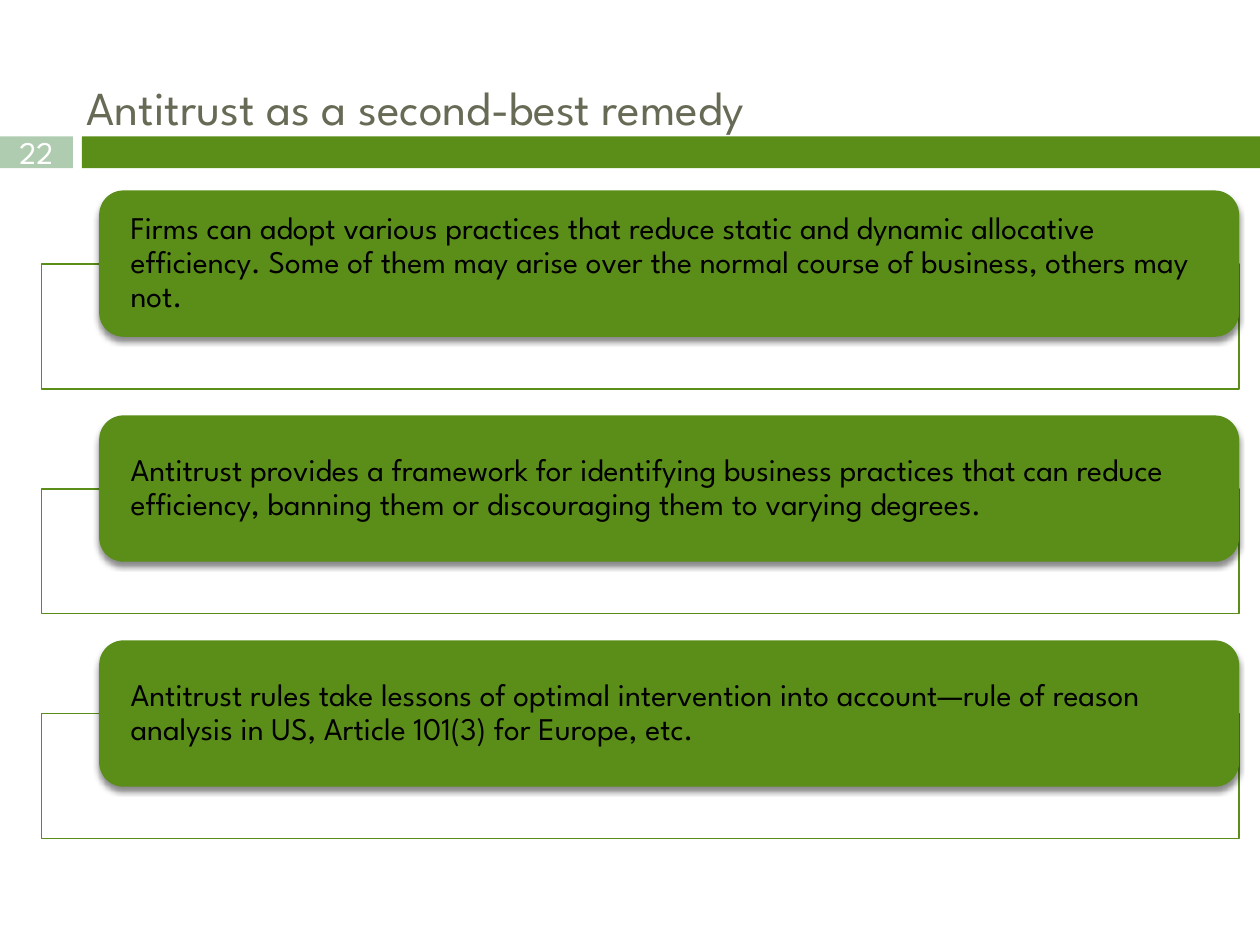
import lxml.etree
import pptx
import pptx.dml.color
import pptx.enum.shapes
import pptx.enum.text
import pptx.oxml
import pptx.oxml.ns
import pptx.util

Cm = pptx.util.Cm
Pt = pptx.util.Pt
SHAPES = pptx.enum.shapes.MSO_SHAPE
ALIGN = pptx.enum.text.PP_ALIGN
MIDDLE = pptx.enum.text.MSO_ANCHOR.MIDDLE
GREEN = "5A8E19"
SHADOW = (
    f'<a:outerShdw {pptx.oxml.ns.nsdecls("a")} blurRad="38100" dist="30480" '
    'dir="5400000" rotWithShape="0"><a:srgbClr val="000000">'
    '<a:alpha val="45000"/></a:srgbClr></a:outerShdw>'
)


def paint(color_format, hex_string):
    color_format.rgb = pptx.dml.color.RGBColor.from_string(hex_string)


def write(shape, text, color, frame_values, paragraph_values, size):
    frame = shape.text_frame
    frame.text = text
    paragraph = frame.paragraphs[0]
    font_values = {"name": "League Spartan", "size": Pt(size), "bold": False}
    for target, values in (
        (frame, {"word_wrap": True, "vertical_anchor": MIDDLE, **frame_values}),
        (paragraph, paragraph_values),
        (paragraph.font, font_values),
    ):
        for name, value in values.items():
            setattr(target, name, value)
    paint(paragraph.font.color, color)


deck = pptx.Presentation()
deck.slide_width, deck.slide_height = Cm(25.4), Cm(19.05)
slide = deck.slides.add_slide(deck.slide_layouts[5])

title = slide.shapes.title
title_place = {"left": Cm(1.27), "top": Cm(1.32), "width": Cm(24), "height": Cm(1.65)}
for name, value in title_place.items():
    setattr(title, name, value)
write(title, "Antitrust as a second-best remedy", "676A55",
      {"margin_left": Cm(0.48)}, {"alignment": ALIGN.LEFT}, 27)

header_parts = []
for left, width, color in ((0, 1.47, "B0CCB0"), (1.65, 23.75, GREEN)):
    part = slide.shapes.add_shape(
        SHAPES.RECTANGLE, Cm(left), Cm(2.75), Cm(width), Cm(0.64))
    part.shadow.inherit = False
    part.fill.solid()
    paint(part.fill.fore_color, color)
    part.line.fill.background()
    header_parts.append(part)
no_margins = dict.fromkeys(
    ("margin_left", "margin_right", "margin_top", "margin_bottom"), 0)
write(header_parts[0], "22", "FFFFFF", no_margins, {"alignment": ALIGN.CENTER}, 18)

statements = (
    "Firms can adopt various practices that reduce static and dynamic allocative "
    "efficiency. Some of them may arise over the normal course of business, "
    "others may not.",
    "Antitrust provides a framework for identifying business practices that can "
    "reduce efficiency, banning them or discouraging them to varying degrees.",
    "Antitrust rules take lessons of optimal intervention into account—rule of "
    "reason analysis in US, Article 101(3) for Europe, etc.",
)
statement_margins = {**no_margins, "margin_left": Cm(0.49), "margin_right": Cm(0.49)}
statement_paragraph = {"alignment": ALIGN.LEFT, "line_spacing": 0.9}

for row, statement in enumerate(statements):
    top = 3.84 + row * 4.535
    bracket = slide.shapes.add_shape(
        SHAPES.RECTANGLE, Cm(0.84), Cm(top + 1.48), Cm(24.14), Cm(2.52))
    bracket.shadow.inherit = False
    bracket.fill.solid()
    paint(bracket.fill.fore_color, "FFFFFF")
    white = bracket.fill._xPr.find(".//" + pptx.oxml.ns.qn("a:srgbClr"))
    lxml.etree.SubElement(white, pptx.oxml.ns.qn("a:alpha"), val="90000")
    paint(bracket.line.color, GREEN)
    bracket.line.width = Pt(0.79)

    card = slide.shapes.add_shape(
        SHAPES.ROUNDED_RECTANGLE, Cm(2), Cm(top), Cm(22.98), Cm(2.95))
    card.fill.solid()
    paint(card.fill.fore_color, GREEN)
    card.line.fill.background()
    card.shadow.inherit = False
    effects = card._element.spPr.find(pptx.oxml.ns.qn("a:effectLst"))
    effects.append(pptx.oxml.parse_xml(SHADOW))
    write(card, statement, "000000", statement_margins, statement_paragraph, 18)

deck.save("out.pptx")
